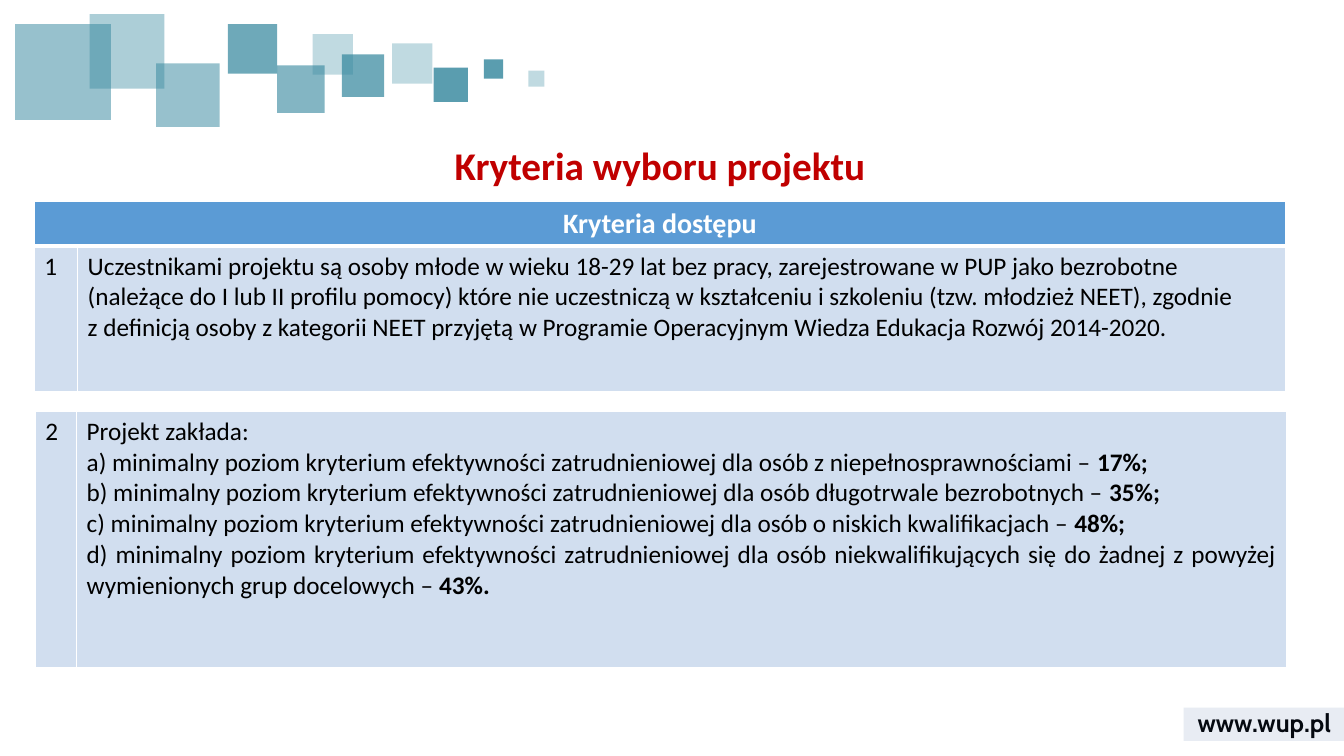
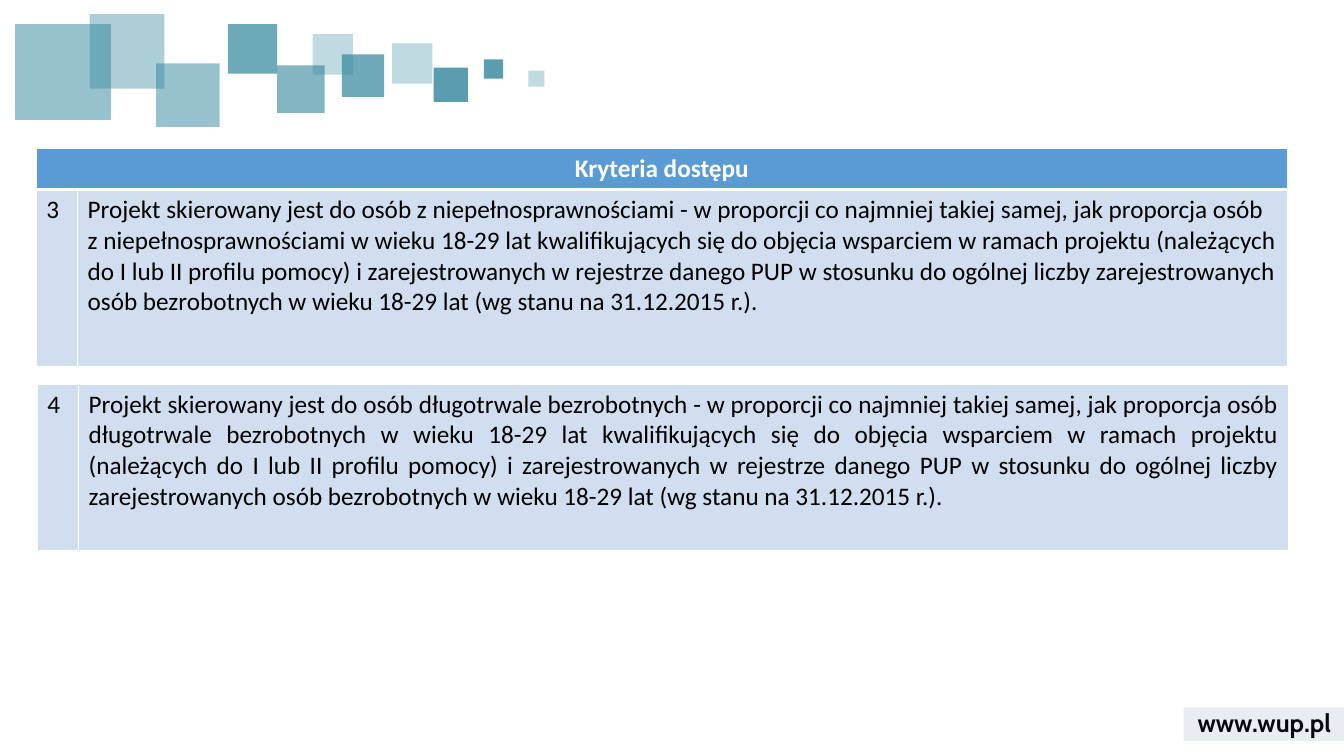
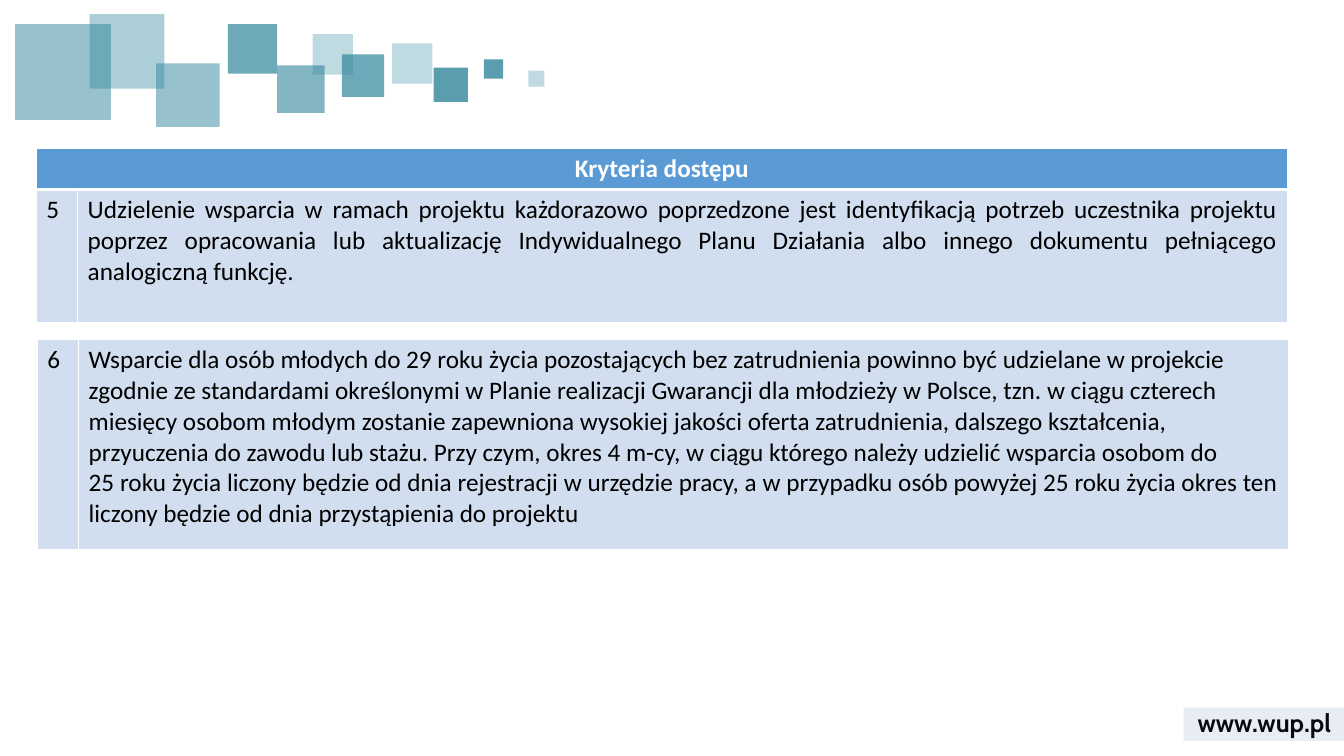
from lxml import etree
from pptx import Presentation
from pptx import util as u
from pptx.dml.color import RGBColor
from pptx.enum import shapes, text
from pptx.oxml import ns

TEAL = RGBColor(0x31, 0x85, 0x9C)
NAVY = RGBColor(0x2F, 0x55, 0x97)
RED = RGBColor(0xC0, 0x00, 0x00)
HEADER_BLUE = RGBColor(0x5B, 0x9B, 0xD5)
ROW_BLUE = RGBColor(0xD1, 0xDE, 0xEF)
WHITE = RGBColor(0xFF, 0xFF, 0xFF)
BLACK = RGBColor(0x00, 0x00, 0x00)

LEFT = text.PP_ALIGN.LEFT
CENTER = text.PP_ALIGN.CENTER
JUSTIFY = text.PP_ALIGN.JUSTIFY

TITLE_FORMAT = {"name": "Calibri", "size": u.Pt(28), "bold": True}
HEADER_FORMAT = {"name": "Calibri", "size": u.Pt(18), "bold": True}
BODY_FORMAT = {"name": "Calibri", "size": u.Pt(18), "bold": False}
ADDRESS_FORMAT = {"name": "Cabin", "size": u.Pt(18), "bold": True}

TABLE_WIDTH = 12.41
THIN, THICK = 0.96, 3

SQUARES = [
    (3.89, 0.43, 0.40, 30),
    (4.30, 0.67, 0.34, 80),
    (3.39, 0.54, 0.42, 70),
    (0.15, 0.24, 0.95, 50),
    (2.75, 0.65, 0.47, 60),
    (1.55, 0.63, 0.63, 50),
    (0.89, 0.14, 0.74, 40),
    (4.80, 0.59, 0.19, 80),
    (2.26, 0.24, 0.49, 70),
    (3.10, 0.34, 0.40, 30),
    (5.24, 0.70, 0.16, 30),
]

EFFECT = "minimalny poziom kryterium efektywności zatrudnieniowej dla osób"
REGISTERED = (
    "w wieku 18-29 lat kwalifikujących się do objęcia wsparciem w ramach projektu "
    "(należących do I lub II profilu pomocy) i zarejestrowanych w rejestrze danego PUP "
    "w stosunku do ogólnej liczby zarejestrowanych osób bezrobotnych w wieku 18-29 lat "
    "(wg stanu na 31.12.2015 r.)."
)
PROPORTION = "w proporcji co najmniej takiej samej, jak proporcja osób"

CRITERIA = {
    1: [
        (LEFT, "Uczestnikami projektu są osoby młode w wieku 18-29 lat bez pracy, "
               "zarejestrowane w PUP jako bezrobotne (należące do I lub II profilu pomocy) "
               "które nie uczestniczą w kształceniu i szkoleniu (tzw. młodzież NEET), zgodnie"),
        (JUSTIFY, "z definicją osoby z kategorii NEET przyjętą w Programie Operacyjnym "
                  "Wiedza Edukacja Rozwój 2014-2020."),
    ],
    2: [
        (JUSTIFY, "Projekt zakłada:"),
        (JUSTIFY, f"a) {EFFECT} z niepełnosprawnościami – ", "17%;"),
        (JUSTIFY, f"b) {EFFECT} długotrwale bezrobotnych – ", "35%;"),
        (JUSTIFY, f"c) {EFFECT} o niskich kwalifikacjach –", " 48%;"),
        (JUSTIFY, f"d) {EFFECT} niekwalifikujących się do żadnej z powyżej "
                  "wymienionych grup docelowych –", " 43%."),
    ],
    3: [
        (LEFT, f"Projekt skierowany jest do osób z niepełnosprawnościami - {PROPORTION}"),
        (LEFT, f"z niepełnosprawnościami {REGISTERED}"),
    ],
    4: [
        (JUSTIFY, f"Projekt skierowany jest do osób długotrwale bezrobotnych - {PROPORTION} "
                  f"długotrwale bezrobotnych {REGISTERED}"),
    ],
    5: [
        (JUSTIFY, "Udzielenie wsparcia w ramach projektu każdorazowo poprzedzone jest "
                  "identyfikacją potrzeb uczestnika projektu poprzez opracowania lub "
                  "aktualizację Indywidualnego Planu Działania albo innego dokumentu "
                  "pełniącego analogiczną funkcję."),
    ],
    6: [
        (LEFT, "Wsparcie dla osób młodych do 29 roku życia pozostających bez zatrudnienia "
               "powinno być udzielane w projekcie zgodnie ze standardami określonymi w Planie "
               "realizacji Gwarancji dla młodzieży w Polsce, tzn. w ciągu czterech miesięcy "
               "osobom młodym zostanie zapewniona wysokiej jakości oferta zatrudnienia, "
               "dalszego kształcenia, przyuczenia do zawodu lub stażu. Przy czym, okres 4 m-cy, "
               "w ciągu którego należy udzielić wsparcia osobom do"),
        (JUSTIFY, "25 roku życia liczony będzie od dnia rejestracji w urzędzie pracy, "
                  "a w przypadku osób powyżej 25 roku życia okres ten liczony będzie "
                  "od dnia przystąpienia do projektu"),
    ],
}


def apply_format(font, values, color):
    for name, value in values.items():
        setattr(font, name, value)
    font.color.rgb = color


def add_run(paragraph, words, values, color):
    run = paragraph.add_run()
    run.text = words
    apply_format(run.font, values, color)


def set_margins(frame, margin):
    for side in ("left", "top", "right", "bottom"):
        setattr(frame, f"margin_{side}", u.Inches(margin))


def add_clear_rectangle(slide, box, color, opacity):
    shape = slide.shapes.add_shape(shapes.MSO_SHAPE.RECTANGLE, *map(u.Inches, box))
    shape.shadow.inherit = False
    shape.fill.solid()
    shape.fill.fore_color.rgb = color
    shape.line.fill.background()
    fill_color = shape.element.xpath("p:spPr/a:solidFill/a:srgbClr")[0]
    etree.SubElement(fill_color, ns.qn("a:alpha"), val=str(opacity * 1000))
    return shape


def add_address(slide, box):
    shape = slide.shapes.add_textbox(*map(u.Inches, box))
    frame = shape.text_frame
    frame.word_wrap = True
    frame.vertical_anchor = text.MSO_ANCHOR.MIDDLE
    paragraph = frame.paragraphs[0]
    paragraph.alignment = CENTER
    add_run(paragraph, "www.wup.pl", ADDRESS_FORMAT, BLACK)
    return shape


def decorate_master(presentation, slide):
    decorations = [add_address(slide, (11.74, 6.97, 1.6, 0.4))]
    for left, top, size, opacity in SQUARES:
        decorations.append(add_clear_rectangle(slide, (left, top, size, size), TEAL, opacity))
    decorations.append(add_clear_rectangle(slide, (11.74, 7.02, 1.6, 0.33), NAVY, 11))
    master_tree = presentation.slide_master.shapes.element
    for number, shape in enumerate(decorations, 100):
        shape.element.xpath("p:nvSpPr/p:cNvPr")[0].set("id", str(number))
        master_tree.append(shape.element)


def set_title(slide, box, words):
    title = slide.shapes.title
    title.left, title.top, title.width, title.height = map(u.Inches, box)
    frame = title.text_frame
    frame.word_wrap = True
    frame.auto_size = text.MSO_AUTO_SIZE.NONE
    frame.vertical_anchor = text.MSO_ANCHOR.TOP
    set_margins(frame, 0.04)
    paragraph = frame.paragraphs[0]
    paragraph.alignment = CENTER
    add_run(paragraph, words, TITLE_FORMAT, RED)


def style_cell(cell, color, top=THIN, bottom=THIN):
    cell.fill.solid()
    cell.fill.fore_color.rgb = color
    properties = cell._tc.get_or_add_tcPr()
    widths = {"lnL": THIN, "lnR": THIN, "lnT": top, "lnB": bottom}
    for index, (side, width) in enumerate(widths.items()):
        line = etree.Element(ns.qn(f"a:{side}"), w=str(u.Pt(width)))
        fill = etree.SubElement(line, ns.qn("a:solidFill"))
        etree.SubElement(fill, ns.qn("a:srgbClr"), val=str(WHITE))
        properties.insert(index, line)


def fill_cell(cell, paragraphs, values, color):
    frame = cell.text_frame
    for index, (alignment, words, *strong) in enumerate(paragraphs):
        paragraph = frame.add_paragraph() if index else frame.paragraphs[0]
        paragraph.alignment = alignment
        add_run(paragraph, words, values, color)
        for part in strong:
            add_run(paragraph, part, {**values, "bold": True}, color)


def add_criterion(slide, left, top, number, body_height,
                  header_height=0, header_size=18, number_width=0.41):
    heights = [height for height in (header_height, body_height) if height]
    box = (left, top, TABLE_WIDTH, sum(heights))
    table = slide.shapes.add_table(len(heights), 2, *map(u.Inches, box)).table
    table.first_row = bool(header_height)
    table.horz_banding = False
    for column, width in zip(table.columns, (number_width, TABLE_WIDTH - number_width)):
        column.width = u.Inches(width)
    for row, height in zip(table.rows, heights):
        row.height = u.Inches(height)
    if header_height:
        for cell in table.rows[0].cells:
            style_cell(cell, HEADER_BLUE, bottom=THICK)
        header = table.cell(0, 0)
        header.merge(table.cell(0, 1))
        values = {**HEADER_FORMAT, "size": u.Pt(header_size)}
        fill_cell(header, [(CENTER, "Kryteria dostępu")], values, WHITE)
    contents = ([(LEFT, str(number))], CRITERIA[number])
    for cell, paragraphs in zip(table.rows[len(heights) - 1].cells, contents):
        style_cell(cell, ROW_BLUE, top=THICK if header_height else THIN)
        fill_cell(cell, paragraphs, BODY_FORMAT, BLACK)


def add_title_slide(presentation):
    slide = presentation.slides.add_slide(presentation.slide_layouts.get_by_name("Title Only"))
    decorate_master(presentation, slide)
    set_title(slide, (0.34, 1.36, TABLE_WIDTH, 0.55), "Kryteria wyboru projektu")
    add_criterion(slide, 0.34, 2, 1, 1.44, 0.44, 20, 0.43)
    add_criterion(slide, 0.35, 4.08, 2, 2.54)


def add_criteria_slide(presentation, first_number, first_height, second_top, second_height):
    slide = presentation.slides.add_slide(presentation.slide_layouts.get_by_name("Blank"))
    add_criterion(slide, 0.36, 1.47, first_number, first_height, 0.41)
    add_criterion(slide, 0.37, second_top, first_number + 1, second_height)


def main():
    presentation = Presentation()
    presentation.slide_width = u.Inches(13.33)
    presentation.slide_height = u.Inches(7.5)
    add_title_slide(presentation)
    add_criteria_slide(presentation, 3, 1.76, 3.81, 1.65)
    add_criteria_slide(presentation, 5, 1.32, 3.37, 2.08)
    presentation.save("out.pptx")


if __name__ == "__main__":
    main()
